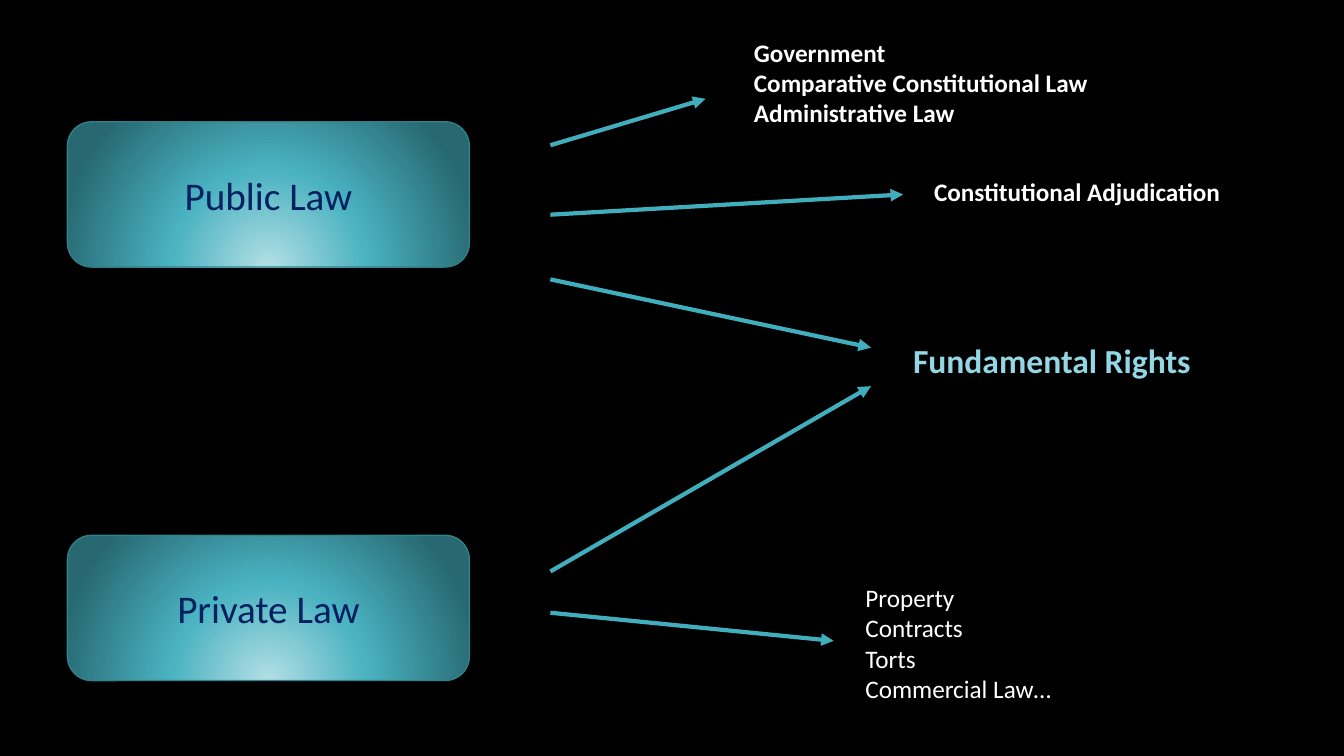
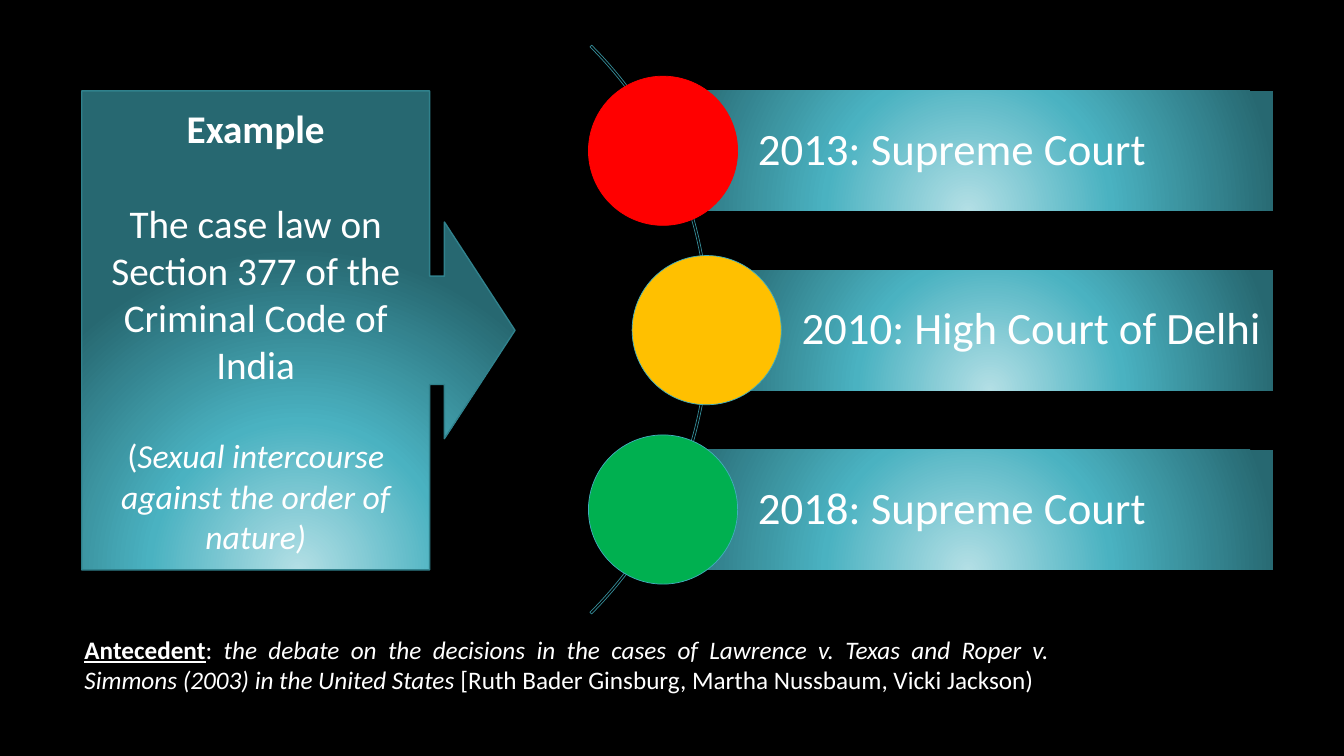
from pptx import Presentation
from pptx.dml.color import RGBColor
from pptx.enum import shapes, text
from pptx.oxml import parse_xml
from pptx.oxml.ns import nsdecls, qn
from pptx.util import Cm, Pt

FONT = "Calibri"
COLORS = {
    "background": "000000", "white": "FFFFFF", "navy": "002060",
    "highlight": "94D7E4", "teal": "41AEBD", "edge": "30818C", "arc": "348B97",
    "red": "FF0000", "amber": "FFC000", "green": "00B050",
}
GLOW_STOPS = [(0, "B3DFE5"), (46, "4AB2C1"), (100, "276871")]

# Slide 1: lengths in cm
BRANCHES = [("Public Law", 3.07), ("Private Law", 13.49)]
BRANCH_LEFT, BRANCH_WIDTH, BRANCH_HEIGHT = 1.7, 10.13, 3.66
ARROW_START = 13.87
ARROWS = [  # start y, end x, end y
    (3.66, 17.78, 2.49),
    (5.41, 22.76, 4.9),
    (7.04, 21.95, 8.76),
    (14.4, 21.95, 9.73),
    (15.44, 21.01, 16.15),
]
TOPICS = [  # lines, box, format
    (["Government", "Comparative Constitutional Law", "Administrative Law"],
     (18.75, 0.81, 9.58, 3.33), {"bold": True}),
    (["Constitutional Adjudication"], (23.29, 4.32, 8.13, 1.02), {"bold": True}),
    (["Fundamental Rights"], (22.76, 8.43, 8, 1.27),
     {"bold": True, "size": 24, "color": "highlight"}),
    (["Property", "Contracts", "Torts", "Commercial Law…"],
     (21.56, 14.55, 6.73, 3.33), {}),
]

# Slide 2: lengths in cm
RULINGS = [  # text, bar left, circle fill, circle line
    ("2013: Supreme Court", 16.71, "red", "red"),
    ("2010: High Court of Delhi", 17.81, "amber", "teal"),
    ("2018: Supreme Court", 16.71, "green", "teal"),
]
BAR_TOP, BAR_PITCH, BAR_HEIGHT, BAR_RIGHT = 2.29, 4.52, 3.02, 32.08
CIRCLE_SIZE = 3.76
ARC_BOX = (-2.39, -1.83, 20.27, 20.27)
CALLOUT_BOX = (2.06, BAR_TOP, 10.92, 12.07)
EXAMPLE = [
    [("Example", {"bold": True})],
    [("The case law on Section 377 of the Criminal Code of India", {})],
    [("(", {"size": 24}),
     ("Sexual intercourse against the order of nature)", {"size": 24, "italic": True})],
]
ANTECEDENT_BOX = (1.88, 15.85, 24.82, 1.8)
ANTECEDENT = [[
    ("Antecedent", {"bold": True, "underline": True}),
    (": ", {}),
    ("the debate on the decisions in the cases of Lawrence v. Texas and "
     "Roper v. Simmons (2003) in the United States ", {"italic": True}),
    ("[Ruth Bader Ginsburg, Martha Nussbaum, Vicki Jackson)", {}),
]]


def rgb(name):
    return RGBColor.from_string(COLORS[name])


def write(shape, paragraphs, align="LEFT", anchor="TOP", gap=0, spacing=None, **base):
    """Fill a shape with paragraphs, each a string or a list of (text, format) runs."""
    frame = shape.text_frame
    frame.word_wrap = True
    frame.vertical_anchor = text.MSO_ANCHOR[anchor]
    for index, runs in enumerate(paragraphs):
        paragraph = frame.add_paragraph() if index else frame.paragraphs[0]
        paragraph.alignment = text.PP_ALIGN[align]
        if index and gap:
            paragraph.space_before = Pt(gap)
        if spacing:
            paragraph.line_spacing = spacing
        for content, own in [(runs, {})] if isinstance(runs, str) else runs:
            style = {"size": 18, "color": "white", **base, **own}
            run = paragraph.add_run()
            run.text = content
            run.font.name = FONT
            run.font.size = Pt(style["size"])
            run.font.color.rgb = rgb(style["color"])
            run.font.bold = style.get("bold", False)
            run.font.italic = style.get("italic", False)
            run.font.underline = style.get("underline", False)


def add_label(slide, box, paragraphs, **style):
    write(slide.shapes.add_textbox(*map(Cm, box)), paragraphs, **style)


def set_glow(shape):
    """Give a shape the radial gradient that shines from its lower edge."""
    stops = "".join(
        f'<a:gs pos="{position * 1000}"><a:srgbClr val="{color}"/></a:gs>'
        for position, color in GLOW_STOPS)
    gradient = parse_xml(
        f'<a:gradFill {nsdecls("a")} rotWithShape="1"><a:gsLst>{stops}</a:gsLst>'
        '<a:path path="circle"><a:fillToRect l="50000" t="130000" r="50000" b="-30000"/>'
        '</a:path></a:gradFill>')
    shape.fill.background()
    properties = shape.element.spPr
    properties.replace(properties.find(qn("a:noFill")), gradient)


def add_figure(slide, kind, box, fill=None, line=None, width=1, adjustments=()):
    """Add a preset shape; fill is a colour name, "glow" or None."""
    shape = slide.shapes.add_shape(shapes.MSO_SHAPE[kind], *map(Cm, box))
    shape.shadow.inherit = False
    for index, value in enumerate(adjustments):
        shape.adjustments[index] = value
    if fill == "glow":
        set_glow(shape)
    elif fill:
        shape.fill.solid()
        shape.fill.fore_color.rgb = rgb(fill)
    else:
        shape.fill.background()
    if line:
        shape.line.color.rgb = rgb(line)
        shape.line.width = Pt(width)
    else:
        shape.line.fill.background()
    return shape


def add_arrow(slide, *ends):
    connector = slide.shapes.add_connector(shapes.MSO_CONNECTOR.STRAIGHT, *map(Cm, ends))
    connector.line.color.rgb = rgb("teal")
    connector.line.width = Pt(3)
    connector.line._get_or_add_ln().append(
        parse_xml(f'<a:tailEnd {nsdecls("a")} type="triangle"/>'))
    connector.element.spPr.append(parse_xml(f'<a:effectLst {nsdecls("a")}/>'))


def build_branches(slide):
    for name, top in BRANCHES:
        box = (BRANCH_LEFT, top, BRANCH_WIDTH, BRANCH_HEIGHT)
        branch = add_figure(slide, "ROUNDED_RECTANGLE", box, "glow", "edge")
        write(branch, [name], align="CENTER", anchor="MIDDLE", size=28, color="navy")
    for start_y, end_x, end_y in ARROWS:
        add_arrow(slide, ARROW_START, start_y, end_x, end_y)
    for lines, box, style in TOPICS:
        add_label(slide, box, lines, **style)


def build_example(slide):
    add_figure(slide, "BLOCK_ARC", ARC_BOX, line="arc", width=0.5,
               adjustments=(189, 27, 0.003))
    for index, (ruling, left, fill, line) in enumerate(RULINGS):
        top = BAR_TOP + index * BAR_PITCH
        bar = add_figure(slide, "RECTANGLE", (left, top, BAR_RIGHT - left, BAR_HEIGHT), "glow")
        bar.text_frame.margin_left = Cm(2.39)
        bar.text_frame.margin_right = Cm(0.2)
        write(bar, [ruling], anchor="MIDDLE", spacing=0.9, size=32)
        circle_top = top + (BAR_HEIGHT - CIRCLE_SIZE) / 2
        add_figure(slide, "OVAL",
                   (left - CIRCLE_SIZE / 2, circle_top, CIRCLE_SIZE, CIRCLE_SIZE),
                   fill, line, width=0.5)
    callout = add_figure(slide, "RIGHT_ARROW_CALLOUT", CALLOUT_BOX, "glow", "edge",
                         adjustments=(0.25, 0.25, 0.163, 0.803))
    write(callout, EXAMPLE, align="CENTER", anchor="MIDDLE", gap=34, size=28)
    add_label(slide, ANTECEDENT_BOX, ANTECEDENT, align="JUSTIFY")


def main():
    presentation = Presentation()
    presentation.slide_width, presentation.slide_height = Cm(33.87), Cm(19.05)
    background = presentation.slide_master.background.fill
    background.solid()
    background.fore_color.rgb = rgb("background")
    for build in (build_branches, build_example):
        build(presentation.slides.add_slide(presentation.slide_layouts[6]))
    presentation.save("out.pptx")


if __name__ == "__main__":
    main()
